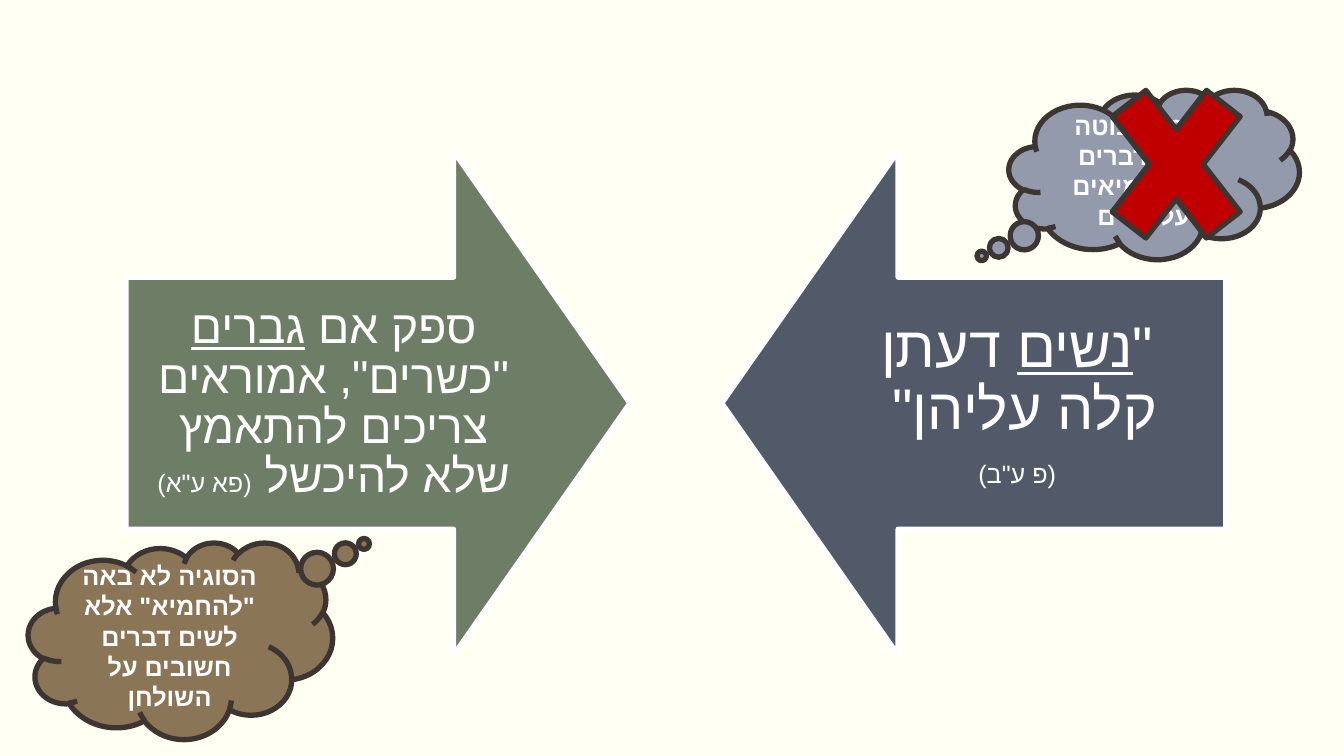
from lxml import etree
from pptx import Presentation
from pptx import util as u
from pptx.dml.color import RGBColor
from pptx.enum import shapes, text
from pptx.oxml import ns


def colour(value):
    """Turn a hex string into a colour."""
    return RGBColor.from_string(value)


class ArgumentSlide:
    """Hold the style and the current slide, and draw its elements."""

    font = "Arial"
    white = "FFFFFF"
    outline = "3C3532"
    line_width = 3.78

    def __init__(self, presentation, background):
        """Add a blank slide with a plain background."""
        self.slide = presentation.slides.add_slide(presentation.slide_layouts[6])
        fill = self.slide.background.fill
        fill.solid()
        fill.fore_color.rgb = colour(background)

    def shape(self, kind, box, fill, line=outline, adjustments=(), rotation=0):
        """Draw a filled and outlined preset shape."""
        shape = self.slide.shapes.add_shape(kind, *map(u.Pt, box))
        shape.shadow.inherit = False
        shape.rotation = rotation
        for index, value in enumerate(adjustments):
            shape.adjustments[index] = value
        shape.fill.solid()
        shape.fill.fore_color.rgb = colour(fill)
        shape.line.color.rgb = colour(line)
        shape.line.width = u.Pt(self.line_width)
        return shape

    def arrow(self, left, fill, rotation):
        """Draw a large block arrow turned to one side."""
        self.shape(shapes.MSO_SHAPE.DOWN_ARROW, (left, 108, 360, 360), fill,
                   self.white, (0.5, 0.35), rotation)

    def cloud(self, box, fill, tail, words):
        """Draw a thought cloud with bold words."""
        cloud = self.shape(shapes.MSO_SHAPE.CLOUD_CALLOUT, box, fill, adjustments=tail)
        frame = cloud.text_frame
        frame.word_wrap = True
        frame.vertical_anchor = text.MSO_ANCHOR.MIDDLE
        paragraph = frame.paragraphs[0]
        paragraph.alignment = text.PP_ALIGN.CENTER
        self.run(paragraph, words, 18, bold=True)

    def label(self, left, inset, paragraphs):
        """Write right-to-left paragraphs over an arrow."""
        box = self.slide.shapes.add_textbox(*map(u.Pt, (left, 198, 296.8, 180)))
        frame = box.text_frame
        frame.word_wrap = True
        frame.vertical_anchor = text.MSO_ANCHOR.MIDDLE
        frame.margin_left = frame.margin_right = u.Pt(inset)
        frame.margin_top = frame.margin_bottom = u.Pt(inset)
        for index, runs in enumerate(paragraphs):
            paragraph = frame.add_paragraph() if index else frame.paragraphs[0]
            paragraph.alignment = text.PP_ALIGN.CENTER
            paragraph.line_spacing = 0.9
            paragraph.space_after = u.Pt(round(0.35 * runs[0][1]))
            paragraph._p.get_or_add_pPr().set("rtl", "1")
            for words, size, underline in runs:
                self.run(paragraph, words, size, underline=underline)

    def run(self, paragraph, words, size, bold=False, underline=False):
        """Add one run of white text."""
        run = paragraph.add_run()
        run.text = words
        run.font.size = u.Pt(size)
        run.font.bold = bold
        run.font.underline = underline
        run.font.color.rgb = colour(self.white)
        run.font.name = self.font
        script_font = etree.SubElement(run.font._element, ns.qn("a:cs"))
        script_font.set("typeface", self.font)


def main():
    """Build and save the slide."""
    presentation = Presentation()
    presentation.slide_width = u.Pt(960)
    presentation.slide_height = u.Pt(540)
    slide = ArgumentSlide(presentation, "FFFFF3")

    slide.arrow(90, "6D7D66", 270)
    slide.label(90, 18.7, [[
        ("ספק אם ", 33, False),
        ("גברים", 33, True),
        (' "כשרים", אמוראים צריכים להתאמץ שלא להיכשל ', 33, False),
        ('(פא ע"א)', 18, False),
    ]])
    slide.arrow(515.5, "525A6A", 90)
    slide.label(578.2, 23, [
        [('"', 41, False), ("נשים", 41, True), (' דעתן קלה עליהן" ', 41, False)],
        [('(פ ע"ב)', 18, False)],
    ])

    slide.cloud((20.2, 387.4, 217.4, 140.4), "8A7557", (0.603, -0.492),
                'הסוגיה לא באה "להחמיא" אלא לשים דברים חשובים על השולחן')
    slide.cloud((720.7, 64.1, 207.4, 121), "929AAB", (-0.594, 0.481),
                "הגמרא נוטה לומר דברים לא מחמיאים על נשים")
    slide.shape(shapes.MSO_SHAPE.MATH_MULTIPLY, (775.4, 33.8, 129.6, 167), "C00000")

    presentation.save("out.pptx")


if __name__ == "__main__":
    main()
